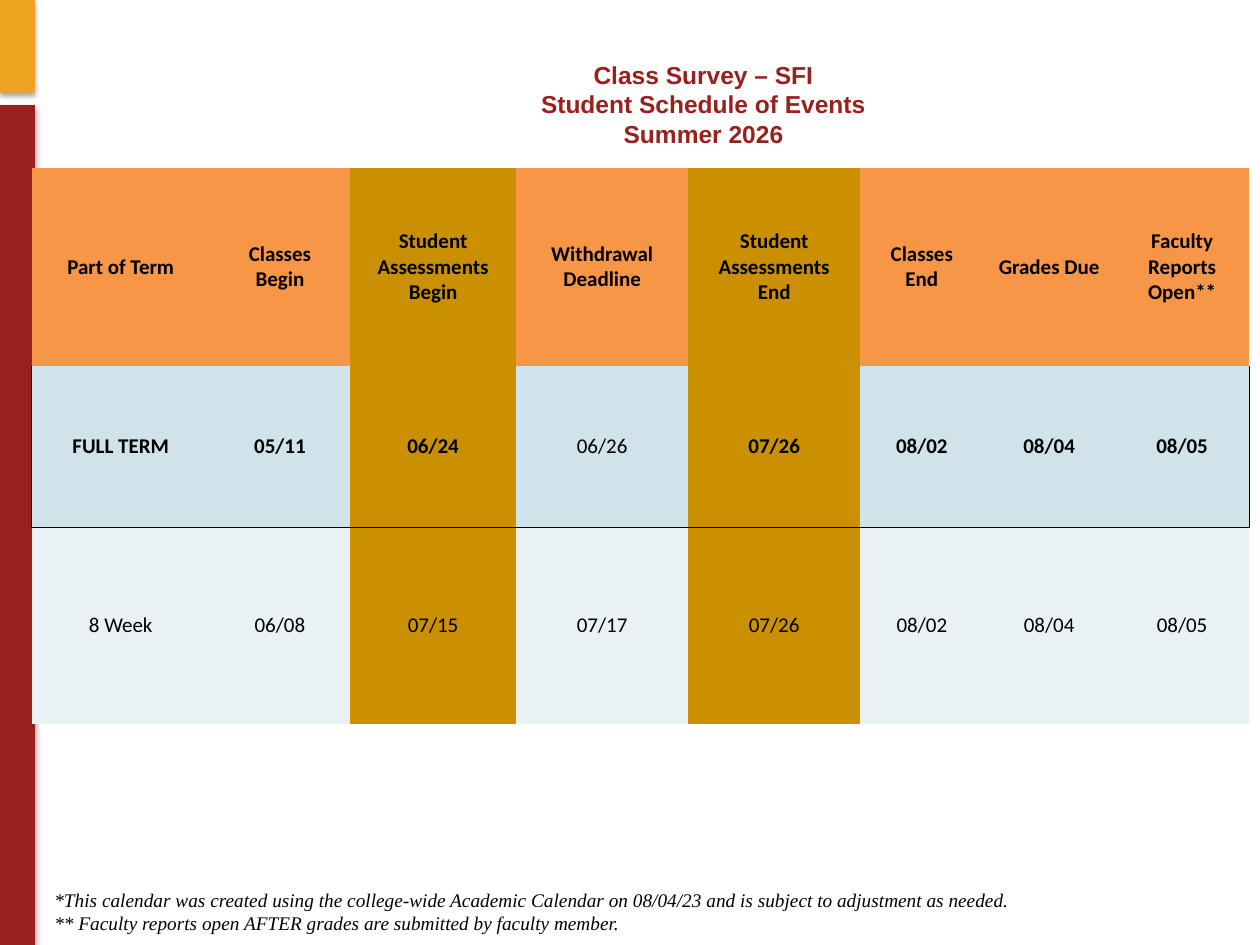
"""Build the student schedule slide with its term table."""
from typing import NamedTuple

from lxml.etree import SubElement
from pptx import Presentation
from pptx.dml.color import RGBColor
from pptx.enum.shapes import MSO_SHAPE
from pptx.enum.text import MSO_ANCHOR, PP_ALIGN
from pptx.oxml.ns import qn
from pptx.util import Pt


class Bar(NamedTuple):
    top: float
    height: float
    fill: str


class Note(NamedTuple):
    left: float
    top: float
    width: float
    height: float
    lines: list
    font: dict
    para: dict
    frame: dict


class Row(NamedTuple):
    height: float
    fill: str
    bold: bool
    cells: list


RED, GOLD, BLACK = "99201C", "CA9002", "000000"
BARS = [Bar(60, 480, RED), Bar(0, 53, "EEA420")]
WIDTHS = [102, 80, 95, 98.3, 98.3, 70.5, 75, 77]
MARKED = (2, 4)
TERM, DROP = 1, 3
ROWS = [
    Row(113, "F79646", True, [
        "Part of Term", "Classes Begin", "Student\nAssessments Begin",
        "Withdrawal Deadline", "Student\nAssessments End", "Classes\nEnd",
        "Grades Due", "Faculty Reports Open**"]),
    Row(92.5, "D0E3EA", True, [
        "FULL TERM", "05/11", "06/24", "06/26", "07/26", "08/02", "08/04", "08/05"]),
    Row(112, "E9F1F5", False, [
        "8 Week", "06/08", "07/15", "07/17", "07/26", "08/02", "08/04", "08/05"]),
]
NOTES = [
    Note(114, 34, 576, 51,
         ["Class Survey – SFI", "Student Schedule of Events", "Summer 2026"],
         {"name": "Arial", "size": Pt(14), "bold": True, "color": RED},
         {"alignment": PP_ALIGN.CENTER},
         {"vertical_anchor": MSO_ANCHOR.MIDDLE, "margin_top": 0, "margin_bottom": 0}),
    Note(24, 504, 684, 34,
         ["*This calendar was created using the college-wide Academic Calendar"
          " on 08/04/23 and is subject to adjustment as needed.",
          "** Faculty reports open AFTER grades are submitted by faculty member."],
         {"name": "Times New Roman", "size": Pt(11), "italic": True, "color": BLACK},
         {}, {}),
]


def paint(part, tone: str) -> None:
    """Give a fill or a font a solid colour."""
    if hasattr(part, "solid"):
        part.solid()
        part = part.fore_color
    else:
        part = part.color
    part.rgb = RGBColor.from_string(tone)


def apply(item, form: dict) -> None:
    """Set every format value on an item."""
    for key, value in form.items():
        if key == "color":
            paint(item, value)
        else:
            setattr(item, key, value)


def write(frame, lines: list, font: dict, para: dict) -> None:
    """Write one formatted paragraph for each line."""
    frame.text = "\n".join(lines)
    for item in frame.paragraphs:
        apply(item, para)
        apply(item.runs[0].font, font)


def draw_bar(slide, bar: Bar) -> None:
    """Draw a side bar with a soft shadow below it."""
    shape = slide.shapes.add_shape(
        MSO_SHAPE.RECTANGLE, 0, Pt(bar.top), Pt(20), Pt(bar.height))
    paint(shape.fill, bar.fill)
    shape.line.fill.background()
    shape.shadow.inherit = False
    effect = shape._element.spPr.find(qn("a:effectLst"))
    shade = SubElement(effect, qn("a:outerShdw"), blurRad=str(Pt(3.1)),
                       dist=str(Pt(1.8)), dir="5400000", rotWithShape="0")
    tone = SubElement(shade, qn("a:srgbClr"), val=BLACK)
    SubElement(tone, qn("a:alpha"), val="35000")


def draw_note(slide, note: Note) -> None:
    """Draw a wrapped text box."""
    box = slide.shapes.add_textbox(*map(Pt, note[:4]))
    apply(box.text_frame, {"word_wrap": True, **note.frame})
    write(box.text_frame, note.lines, note.font, note.para)


def edge(cell, sides: str) -> None:
    """Rule the named sides of a cell, given in L, R, T, B order."""
    props = cell._tc.get_or_add_tcPr()
    for side in sides:
        line = SubElement(props, qn(f"a:ln{side}"), w=str(Pt(1)))
        fill = SubElement(line, qn("a:solidFill"))
        SubElement(fill, qn("a:srgbClr"), val=BLACK)


def sides(row: int, col: int) -> str:
    """Name the ruled sides of the cell at a row and column."""
    if row == TERM:
        return "L" * (col == 0) + "R" * (col == len(WIDTHS) - 1) + "B"
    return "T" if row > TERM else ""


def draw_table(slide) -> None:
    """Draw the schedule with its marked columns."""
    high = sum(row.height for row in ROWS)
    table = slide.shapes.add_table(
        len(ROWS), len(WIDTHS), Pt(18), Pt(96), Pt(sum(WIDTHS)), Pt(high)).table
    style = table._tbl.tblPr.find(qn("a:tableStyleId"))
    style.text = "{2D5ABB26-0587-4C30-8999-92F81FD0307C}"
    for col, width in enumerate(WIDTHS):
        table.columns[col].width = Pt(width)
    for num, row in enumerate(ROWS):
        table.rows[num].height = Pt(row.height)
        for col, text in enumerate(row.cells):
            cell = table.cell(num, col)
            cell.vertical_anchor = MSO_ANCHOR.MIDDLE
            edge(cell, sides(num, col))
            paint(cell.fill, GOLD if col in MARKED else row.fill)
            bold = row.bold and (num, col) != (TERM, DROP)
            font = {"name": "Calibri", "size": Pt(12), "bold": bold, "color": BLACK}
            write(cell.text_frame, text.split("\n"), font,
                  {"alignment": PP_ALIGN.CENTER})


def main() -> None:
    """Build and save the slide."""
    deck = Presentation()
    apply(deck, {"slide_width": Pt(720), "slide_height": Pt(540)})
    slide = deck.slides.add_slide(deck.slide_layouts[6])
    for bar in BARS:
        draw_bar(slide, bar)
    draw_table(slide)
    for note in NOTES:
        draw_note(slide, note)
    deck.save("out.pptx")


if __name__ == "__main__":
    main()
